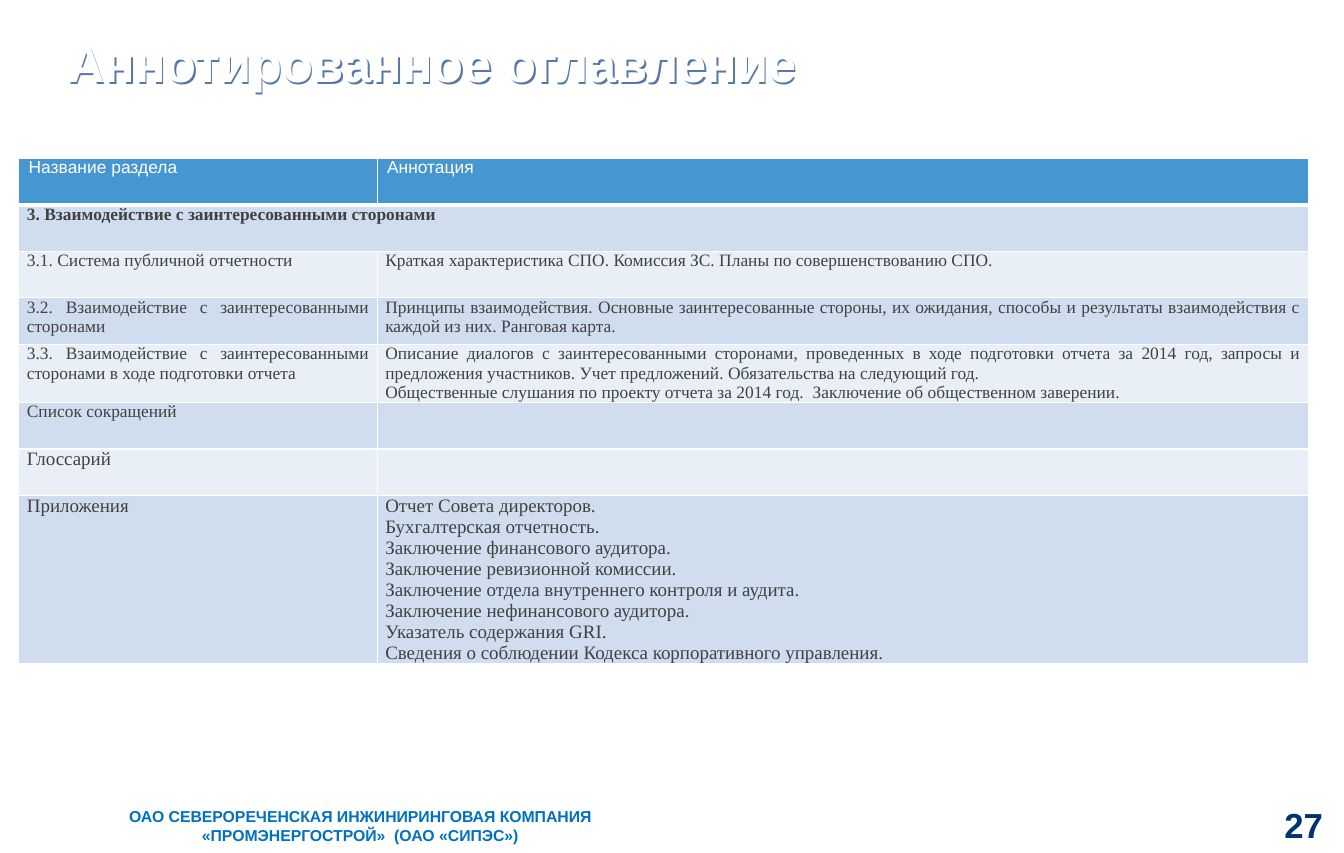
from dataclasses import dataclass

from lxml import etree
from pptx import Presentation
from pptx.dml.color import RGBColor
from pptx.enum import text
from pptx.oxml import parse_xml
from pptx.oxml.ns import nsdecls, qn
from pptx.util import Cm, Pt

SANS, SERIF = "Arial", "Times New Roman"
WHITE, HEADER_BLUE, BODY_GREY = "FFFFFF", "4596D1", "414142"
BANDS = ("CFDDEE", "E9EFF7")
ALIGN, ANCHOR = text.PP_ALIGN, text.MSO_ANCHOR


@dataclass
class Style:
    size: float
    font: str = SERIF
    colour: str = BODY_GREY
    bold: bool = False
    align: ALIGN = ALIGN.JUSTIFY


@dataclass
class Section:
    name: str
    annotation: str = ""
    style: Style = None
    merged: bool = False


HEADER = Style(11, SANS, WHITE)
BODY = Style(11)
LARGE = Style(12)

SECTIONS = [
    Section("Название раздела", "Аннотация", HEADER),
    Section("3. Взаимодействие с заинтересованными сторонами",
            style=Style(11, bold=True), merged=True),
    Section("3.1. Система публичной отчетности",
            "Краткая характеристика СПО. Комиссия ЗС. Планы по совершенствованию СПО.", BODY),
    Section("3.2. Взаимодействие с заинтересованными сторонами",
            "Принципы взаимодействия. Основные заинтересованные стороны, их ожидания, способы "
            "и результаты взаимодействия с каждой из них. Ранговая карта.", BODY),
    Section("3.3. Взаимодействие с заинтересованными сторонами в ходе подготовки отчета",
            "Описание диалогов с заинтересованными сторонами, проведенных в ходе подготовки "
            "отчета за 2014 год, запросы и предложения участников. Учет предложений. "
            "Обязательства на следующий год.\n"
            "Общественные слушания по проекту отчета за 2014 год.  "
            "Заключение об общественном заверении.", BODY),
    Section("Список сокращений", style=BODY),
    Section("Глоссарий", style=LARGE),
    Section("Приложения",
            "Отчет Совета директоров.\n"
            "Бухгалтерская отчетность.\n"
            "Заключение финансового аудитора.\n"
            "Заключение ревизионной комиссии.\n"
            "Заключение отдела внутреннего контроля и аудита.\n"
            "Заключение нефинансового аудитора.\n"
            "Указатель содержания GRI.\n"
            "Сведения о соблюдении Кодекса корпоративного управления.", LARGE),
]


def rgb(value: str) -> RGBColor:
    return RGBColor.from_string(value)


def write(frame, content: str, style: Style) -> None:
    frame.text = content
    frame.word_wrap = True
    for paragraph in frame.paragraphs:
        paragraph.alignment = style.align
        font = paragraph.font
        for run in paragraph.runs:
            font = run.font
        font.size, font.name, font.bold = Pt(style.size), style.font, style.bold
        font.color.rgb = rgb(style.colour)


def place(shape, left: float, top: float, width: float, height: float) -> None:
    shape.left, shape.top, shape.width, shape.height = map(Cm, (left, top, width, height))


def clear_margins(frame) -> None:
    frame.margin_left = frame.margin_right = frame.margin_top = frame.margin_bottom = 0


def add_borders(cell, bottom_width: float) -> None:
    properties = cell._tc.get_or_add_tcPr()
    for side, width in (("L", 1), ("R", 1), ("T", 1), ("B", bottom_width)):
        line = etree.SubElement(properties, qn(f"a:ln{side}"), w=str(Pt(width)))
        fill = etree.SubElement(line, qn("a:solidFill"))
        etree.SubElement(fill, qn("a:srgbClr"), val=WHITE)


def add_title(slide) -> None:
    title = slide.shapes.title
    place(title, 1.52, 0.23, 26.92, 2.51)
    write(title.text_frame, "Аннотированное оглавление",
          Style(32, SANS, WHITE, True, ALIGN.LEFT))
    clear_margins(title.text_frame)
    title.text_frame.vertical_anchor = ANCHOR.MIDDLE
    title.text_frame.paragraphs[0].line_spacing = 0.9
    title.fill.background()
    title._element.spPr.append(parse_xml(
        f'<a:effectLst {nsdecls("a")}><a:outerShdw dist="17961" dir="2700000">'
        '<a:srgbClr val="5578AA"/></a:outerShdw></a:effectLst>'))


def add_contents_table(slide) -> None:
    frame = slide.shapes.add_table(len(SECTIONS), 2, Cm(0.42), Cm(3.53), Cm(28.8), Cm(8.32))
    table = frame.table
    table.horz_banding = False
    table.columns[0].width, table.columns[1].width = Cm(8), Cm(20.8)
    for index, section in enumerate(SECTIONS):
        is_header = index == 0
        table.rows[index].height = Cm(1.04)
        for column, content in enumerate((section.name, section.annotation)):
            cell = table.cell(index, column)
            add_borders(cell, 3 if is_header else 1)
            cell.fill.solid()
            cell.fill.fore_color.rgb = rgb(HEADER_BLUE if is_header else BANDS[(index - 1) % 2])
            cell.margin_left = cell.margin_right = Cm(0.22 if is_header else 0.18)
            cell.margin_top = cell.margin_bottom = 0
            write(cell.text_frame, content, section.style)
        if section.merged:
            table.cell(index, 0).merge(table.cell(index, 1))


def add_footer(slide) -> None:
    company = slide.shapes.add_textbox(Cm(1.78), Cm(17.9), Cm(12.52), Cm(1.02))
    write(company.text_frame,
          "ОАО СЕВЕРОРЕЧЕНСКАЯ ИНЖИНИРИНГОВАЯ КОМПАНИЯ «ПРОМЭНЕРГОСТРОЙ»  (ОАО «СИПЭС»)",
          Style(10, SANS, "0070C0", True, ALIGN.CENTER))

    number = slide.shapes.add_textbox(Cm(27.33), Cm(17.9), Cm(2.2), Cm(1.04))
    write(number.text_frame, "27", Style(22, SANS, "003274", True, ALIGN.RIGHT))
    clear_margins(number.text_frame)
    number.text_frame.vertical_anchor = ANCHOR.MIDDLE


def main() -> None:
    presentation = Presentation()
    presentation.slide_width, presentation.slide_height = Cm(30), Cm(19.05)
    slide = presentation.slides.add_slide(presentation.slide_layouts[5])
    add_title(slide)
    add_contents_table(slide)
    add_footer(slide)
    presentation.save("out.pptx")


if __name__ == "__main__":
    main()
